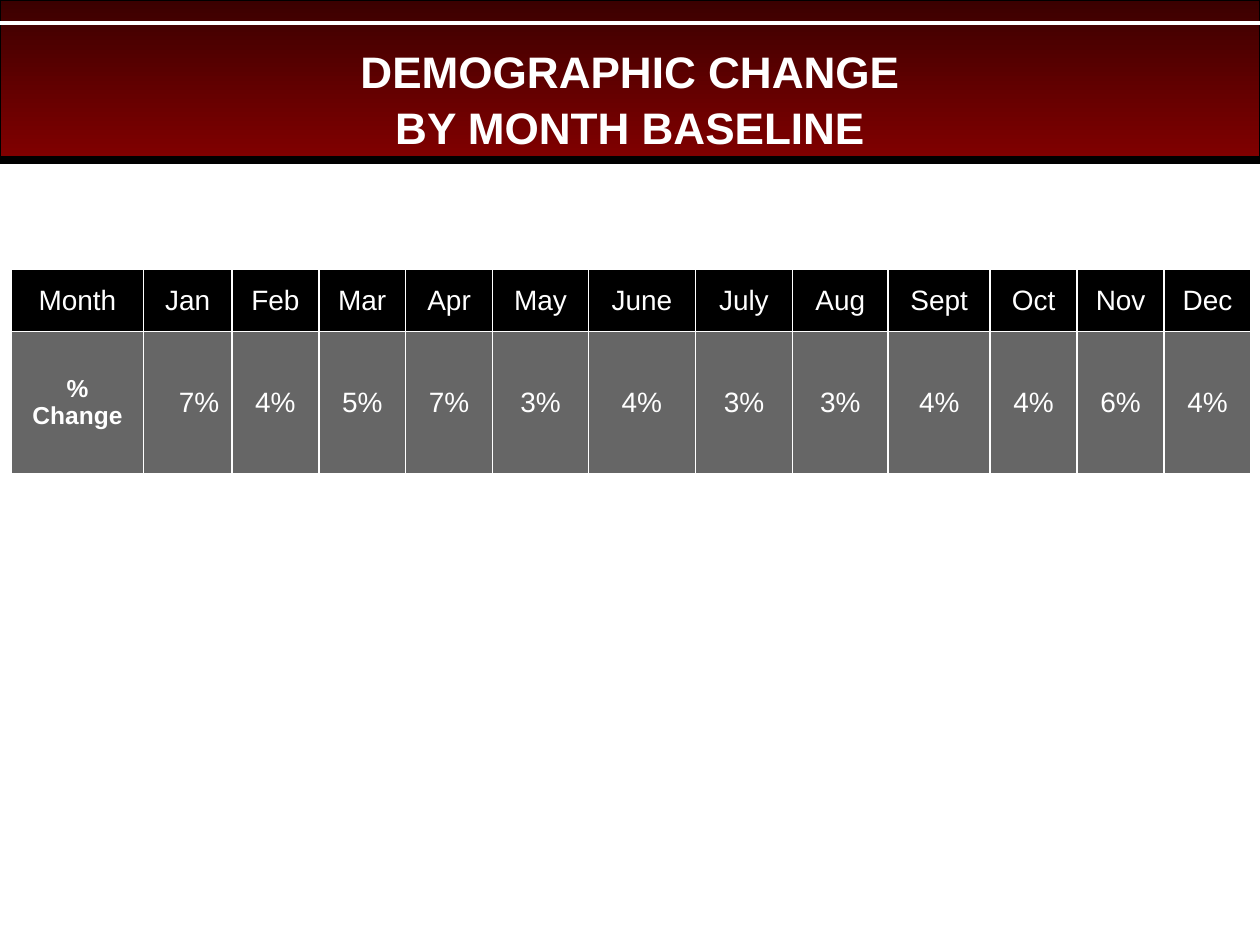
from lxml import etree
from pptx import Presentation
from pptx.dml.color import RGBColor
from pptx.enum.shapes import MSO_CONNECTOR, MSO_SHAPE
from pptx.enum.text import MSO_ANCHOR, PP_ALIGN
from pptx.oxml.ns import qn
from pptx.util import Inches, Pt

STRAIGHT = MSO_CONNECTOR.STRAIGHT
RECTANGLE = MSO_SHAPE.RECTANGLE
MIDDLE = MSO_ANCHOR.MIDDLE
CENTER, RIGHT = PP_ALIGN.CENTER, PP_ALIGN.RIGHT

COLORS = {"black": "000000", "white": "FFFFFF", "maroon": "800000",
          "dark_maroon": "3B0000", "gray": "666666"}
FONT = "Arial"
MONTHS = ["Jan", "Feb", "Mar", "Apr", "May", "June", "July",
          "Aug", "Sept", "Oct", "Nov", "Dec"]
CHANGES = [7, 4, 5, 7, 3, 4, 3, 3, 4, 4, 6, 4]
COL_WIDTHS = [1.05, 0.7, 0.69, 0.69, 0.69, 0.76, 0.85,
              0.77, 0.76, 0.81, 0.69, 0.69, 0.69]
ROW_HEIGHTS = [0.49, 1.13]


def rgb(name):
    """Return a named colour."""
    return RGBColor.from_string(COLORS[name])


def style_paragraph(p, size, bold=False, align=CENTER):
    """Set white text of the given size, weight and alignment."""
    p.alignment = align
    p.font.name = FONT
    p.font.size = Pt(size)
    p.font.bold = bold
    p.font.color.rgb = rgb("white")


def add_rule(slide, left, top, width, color, weight):
    """Draw a horizontal rule."""
    line = slide.shapes.add_connector(
        STRAIGHT, Inches(left), Inches(top), Inches(left + width), Inches(top))
    line.line.color.rgb = rgb(color)
    line.line.width = Pt(weight)
    etree.SubElement(line._element.spPr, qn("a:effectLst"))


def add_banner(slide, left, top, width, height):
    """Draw the gradient banner with its rules and title."""
    sp = slide.shapes.add_shape(
        RECTANGLE, Inches(left), Inches(top), Inches(width), Inches(height))
    sp.shadow.inherit = False
    sp.fill.gradient()
    sp.fill.gradient_angle = 270
    for stop, color in zip(sp.fill.gradient_stops, ("dark_maroon", "maroon")):
        stop.color.rgb = rgb(color)
    sp.line.color.rgb = rgb("black")
    sp.line.width = Pt(0.75)
    add_rule(slide, left, top + height + 0.02, width, "black", 4.5)
    add_rule(slide, left, top + 0.18, width, "white", 2.25)

    title = slide.shapes.add_textbox(
        Inches(left + 0.5), Inches(top + 0.3), Inches(width - 1), Inches(height - 0.3))
    tf = title.text_frame
    tf.word_wrap = True
    tf.vertical_anchor = MIDDLE
    p = tf.paragraphs[0]
    p.text = "DEMOGRAPHIC CHANGE\vBY MONTH BASELINE"
    p.line_spacing = 1.05
    style_paragraph(p, 25.2, bold=True)


def set_borders(cell):
    """Give a cell thin white borders on all sides."""
    tc_pr = cell._tc.get_or_add_tcPr()
    for i, side in enumerate(("lnL", "lnR", "lnT", "lnB")):
        ln = etree.Element(qn(f"a:{side}"), w=str(Pt(1)))
        fill = etree.SubElement(ln, qn("a:solidFill"))
        etree.SubElement(fill, qn("a:srgbClr"), val=COLORS["white"])
        tc_pr.insert(i, ln)


def add_change_table(slide, left, top):
    """Draw the table of monthly percentage changes."""
    rows = [["Month"] + MONTHS,
            ["%\nChange"] + [f"{change}%" for change in CHANGES]]
    table = slide.shapes.add_table(
        len(rows), len(COL_WIDTHS), Inches(left), Inches(top),
        Inches(sum(COL_WIDTHS)), Inches(sum(ROW_HEIGHTS))).table
    for col, width in zip(table.columns, COL_WIDTHS):
        col.width = Inches(width)
    for r, (values, height) in enumerate(zip(rows, ROW_HEIGHTS)):
        table.rows[r].height = Inches(height)
        for c, value in enumerate(values):
            cell = table.cell(r, c)
            cell.text = value
            cell.vertical_anchor = MIDDLE
            cell.fill.solid()
            cell.fill.fore_color.rgb = rgb("gray" if r else "black")
            set_borders(cell)
            is_label = (r, c) == (1, 0)
            for p in cell.text_frame.paragraphs:
                style_paragraph(p, 14 if is_label else 16, is_label,
                                RIGHT if (r, c) == (1, 1) else CENTER)


def main():
    """Build and save the slide."""
    prs = Presentation()
    prs.slide_width, prs.slide_height = Inches(10), Inches(7.5)
    s = prs.slides.add_slide(prs.slide_layouts[6])
    add_banner(s, 0, 0, 10, 1.25)
    add_change_table(s, 0.09, 2.14)
    prs.save("out.pptx")


if __name__ == "__main__":
    main()
